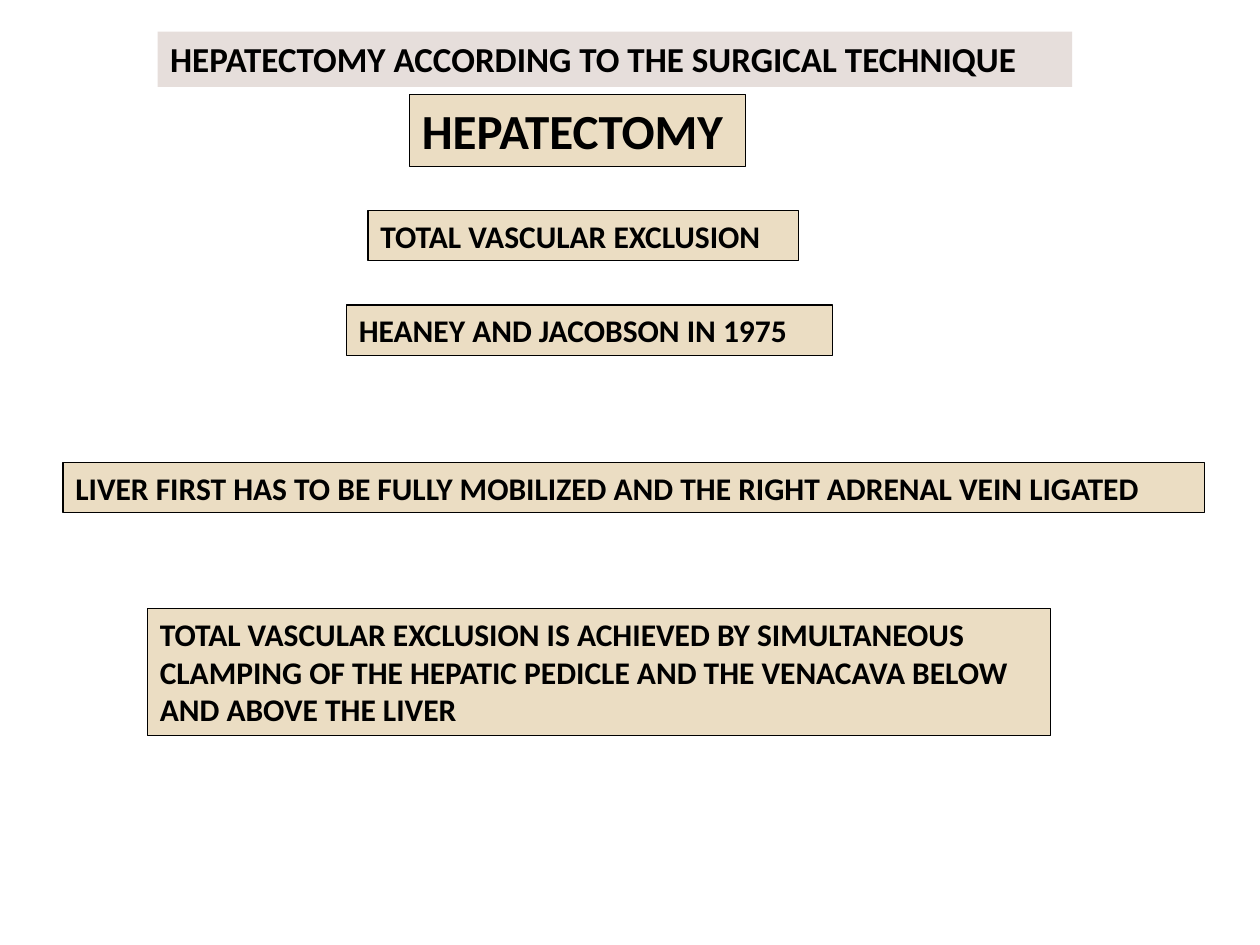
from pptx import Presentation
from pptx.dml.color import RGBColor as RGB
from pptx.enum.text import MSO_ANCHOR as Anchor, MSO_AUTO_SIZE as Fit, PP_ALIGN as Align
from pptx.util import Inches, Pt

HUES = {"head": "E6DEDB", "box": "EBDDC3", "ink": "000000"}

deck = Presentation()
deck.slide_width, deck.slide_height = Inches(10), Inches(7.5)
slide = deck.slides.add_slide(deck.slide_layouts[5])


def style(shape, place, text, size, fill):
    """Place a filled box with bold, left-aligned text."""
    shape.left, shape.top, shape.width, shape.height = map(Inches, place)
    shape.fill.solid()
    shape.fill.fore_color.rgb = RGB.from_string(HUES[fill])
    frame = shape.text_frame
    frame.text = text
    frame.word_wrap = True
    frame.auto_size = Fit.NONE
    frame.vertical_anchor = Anchor.TOP
    para = frame.paragraphs[0]
    para.alignment = Align.LEFT
    font = para.runs[0].font
    font.name, font.size, font.bold = "Calibri", Pt(size), True
    font.color.rgb = RGB.from_string(HUES["ink"])


# Title
style(slide.shapes.title, (1.25, 0.25, 7.26, 0.44),
      "HEPATECTOMY ACCORDING TO THE SURGICAL TECHNIQUE", 20, "head")

# Outlined boxes, top to bottom
boxes = [
    ((3.25, 0.75, 2.67, 0.57), "HEPATECTOMY", 28),
    ((2.92, 1.67, 3.42, 0.4), "TOTAL VASCULAR EXCLUSION", 18),
    ((2.75, 2.42, 3.86, 0.4), "HEANEY AND JACOBSON IN 1975", 18),
    ((0.5, 3.67, 9.06, 0.4),
     "LIVER FIRST HAS TO BE FULLY MOBILIZED AND THE RIGHT ADRENAL VEIN LIGATED", 18),
    ((1.17, 4.83, 7.17, 1.01),
     "TOTAL VASCULAR EXCLUSION IS ACHIEVED BY SIMULTANEOUS CLAMPING OF THE "
     "HEPATIC PEDICLE AND THE VENACAVA BELOW AND ABOVE THE LIVER", 18),
]
for place, text, size in boxes:
    box = slide.shapes.add_textbox(0, 0, 0, 0)
    style(box, place, text, size, "box")
    box.line.color.rgb = RGB.from_string(HUES["ink"])
    box.line.width = Pt(0.75)

deck.save("out.pptx")
